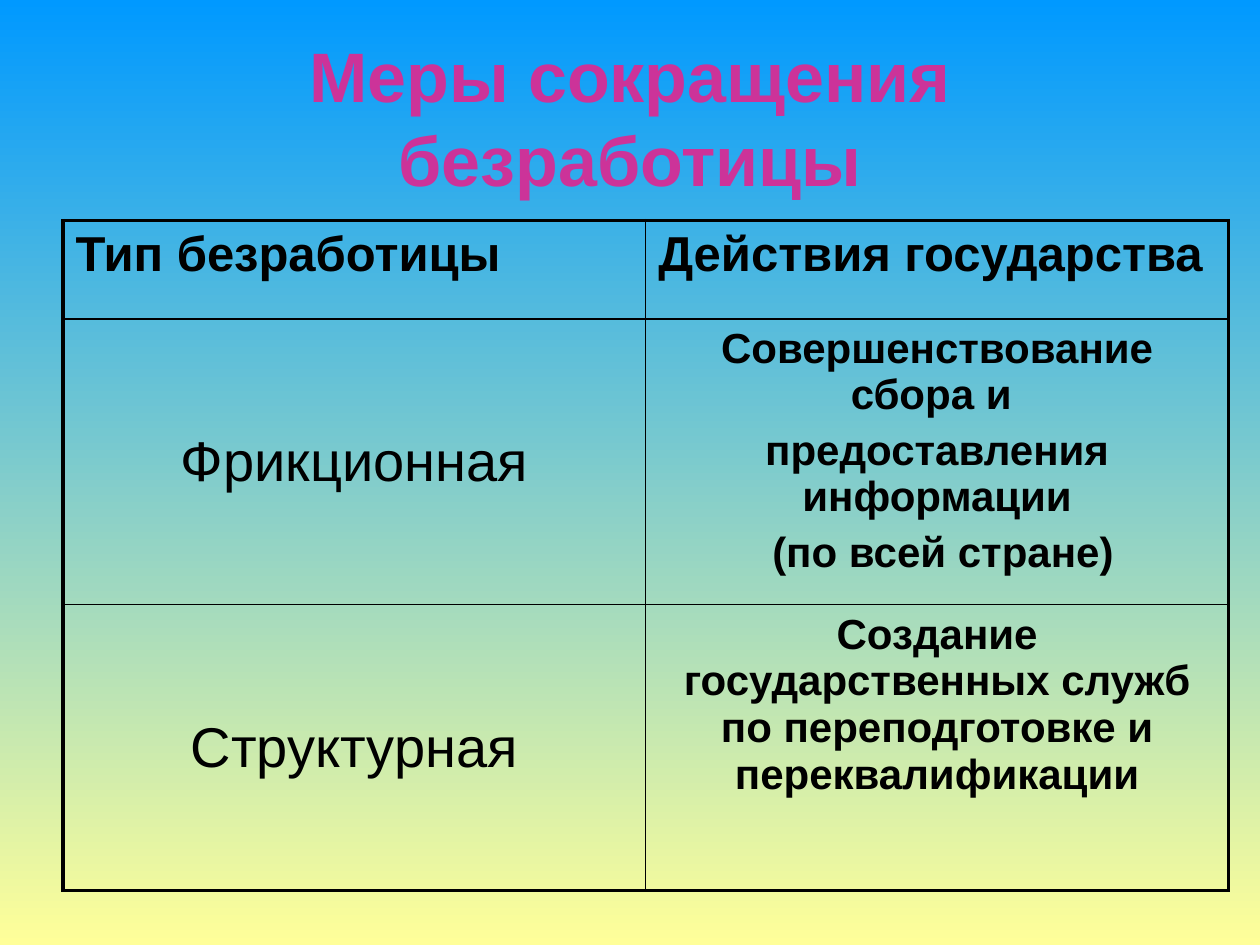
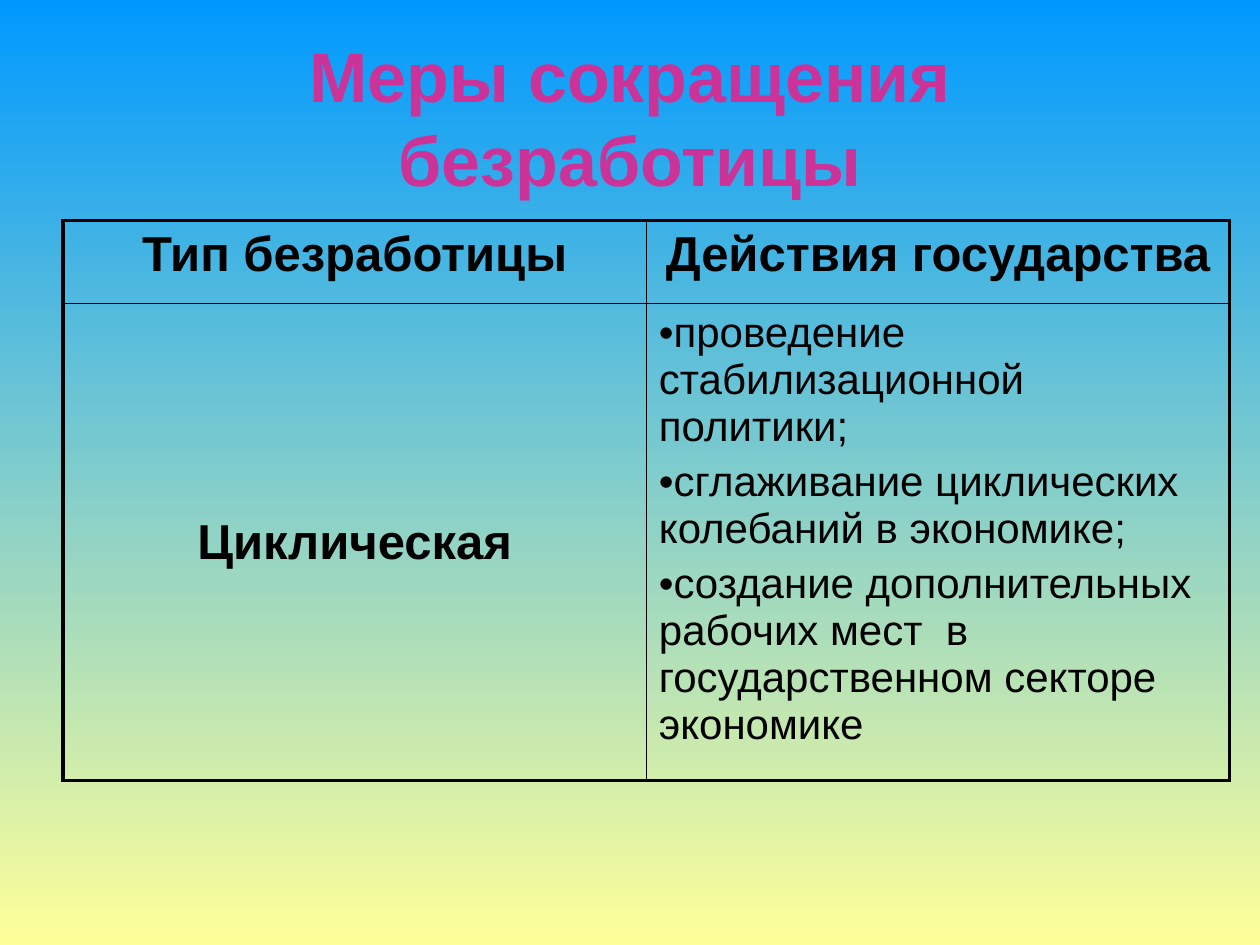
import dataclasses
import typing

import lxml.etree
import pptx
import pptx.dml.color
import pptx.enum.text
import pptx.oxml.ns
import pptx.util

Inches = pptx.util.Inches
Pt = pptx.util.Pt
qn = pptx.oxml.ns.qn
LEFT = pptx.enum.text.PP_ALIGN.LEFT
CENTER = pptx.enum.text.PP_ALIGN.CENTER
TOP = pptx.enum.text.MSO_ANCHOR.TOP
MIDDLE = pptx.enum.text.MSO_ANCHOR.MIDDLE


@dataclasses.dataclass(frozen=True)
class Theme:
    font: str = "Arial"
    sky: str = "0099FF"
    sand: str = "FFFF99"
    title: str = "CC3399"
    ink: str = "000000"
    title_size: int = 40
    type_size: int = 32
    head_size: int = 28
    body_size: int = 24
    outer_line: float = 2.25
    inner_line: float = 1
    space_before: int = 20  # percent of the line


@dataclasses.dataclass(frozen=True)
class Cell:
    lines: tuple[str, ...]
    size: int
    bold: bool = True
    align: typing.Any = CENTER
    anchor: typing.Any = TOP
    bullet: bool = False


@dataclasses.dataclass(frozen=True)
class Measures:
    width: float
    row_heights: tuple[float, ...]
    rows: tuple[tuple[Cell, Cell], ...]


THEME = Theme()
TITLE = "Меры сокращения безработицы"


def rgb(value: str) -> pptx.dml.color.RGBColor:
    return pptx.dml.color.RGBColor.from_string(value)


def write(tf, lines: tuple[str, ...], *, size: int, color: str = THEME.ink,
          bold: bool = True, align=CENTER, anchor=TOP,
          space: int = 0, bullet: bool = False) -> None:
    """Fill a text frame, one paragraph for each line."""
    tf.word_wrap = True
    tf.vertical_anchor = anchor
    for i, line in enumerate(lines):
        p = tf.paragraphs[0] if i == 0 else tf.add_paragraph()
        p.alignment = align
        p_pr = p._p.get_or_add_pPr()
        if space:
            before = lxml.etree.SubElement(p_pr, qn("a:spcBef"))
            lxml.etree.SubElement(before, qn("a:spcPct"), val=str(space * 1000))
        if bullet:
            lxml.etree.SubElement(p_pr, qn("a:buFont"), typeface=THEME.font)
            lxml.etree.SubElement(p_pr, qn("a:buChar"), char="•")
        r = p.add_run()
        r.text = line
        r.font.name = THEME.font
        r.font.size = Pt(size)
        r.font.bold = bold
        r.font.color.rgb = rgb(color)


def set_borders(cell, widths: dict[str, float]) -> None:
    """Draw the cell edges; the lines must precede the fill in the XML."""
    tc_pr = cell._tc.get_or_add_tcPr()
    for i, (side, width) in enumerate(widths.items()):
        ln = lxml.etree.Element(qn(f"a:ln{side}"), w=str(Pt(width)))
        fill = lxml.etree.SubElement(ln, qn("a:solidFill"))
        lxml.etree.SubElement(fill, qn("a:srgbClr"), val=THEME.ink)
        tc_pr.insert(i, ln)


def add_base(prs):
    """Add a slide with the shared gradient and title."""
    s = prs.slides.add_slide(prs.slide_layouts[6])
    fill = s.background.fill
    fill.gradient()
    fill.gradient_angle = 270
    for position, (stop, color) in enumerate(zip(fill.gradient_stops, (THEME.sky, THEME.sand))):
        stop.color.rgb = rgb(color)
        stop.position = position
    sp = s.shapes.add_textbox(Inches(0.5), Inches(0.3), Inches(9), Inches(1.25))
    write(sp.text_frame, (TITLE,), size=THEME.title_size, color=THEME.title, anchor=MIDDLE)
    return s


def add_measures(s, m: Measures) -> None:
    """Add the table: thick frame, thin inner grid, no cell fill."""
    last_row, last_col = len(m.rows) - 1, 1
    table = s.shapes.add_table(
        len(m.rows), 2, Inches(0.5), Inches(1.75),
        Inches(m.width), Inches(sum(m.row_heights))).table
    table.first_row = table.horz_banding = False

    def line(is_outer: bool) -> float:
        return THEME.outer_line if is_outer else THEME.inner_line

    for y, row in enumerate(m.rows):
        table.rows[y].height = Inches(m.row_heights[y])
        for x, c in enumerate(row):
            cell = table.cell(y, x)
            cell.fill.background()
            set_borders(cell, {"L": line(x == 0), "R": line(x == last_col),
                               "T": line(y == 0), "B": line(y == last_row)})
            write(cell.text_frame, c.lines, size=c.size, bold=c.bold, align=c.align,
                  space=THEME.space_before, bullet=c.bullet)
            cell.vertical_anchor = c.anchor
            if c.bullet:
                cell.margin_bottom = 0


def header(align) -> tuple[Cell, Cell]:
    return (Cell(("Тип безработицы",), THEME.head_size, align=align),
            Cell(("Действия государства",), THEME.head_size, align=align))


def type_cell(name: str, size: int = THEME.type_size, bold: bool = False) -> Cell:
    return Cell((name,), size, bold, anchor=MIDDLE)


SLIDES = (
    # Frictional and structural unemployment
    Measures(9.25, (0.78, 2.27, 2.27), (
        header(LEFT),
        (type_cell("Фрикционная"),
         Cell(("Совершенствование сбора и ", "предоставления информации",
               " (по всей стране)"), THEME.body_size)),
        (type_cell("Структурная"),
         Cell(("Создание государственных служб по переподготовке и переквалификации",),
              THEME.body_size)),
    )),
    # Cyclical unemployment
    Measures(9.26, (0.66, 3.58), (
        header(CENTER),
        (type_cell("Циклическая", THEME.head_size, True),
         Cell(("проведение стабилизационной политики;",
               "сглаживание циклических колебаний в экономике;",
               "создание дополнительных рабочих мест  в государственном секторе экономике"),
              THEME.body_size, bold=False, align=LEFT, bullet=True)),
    )),
)


def main() -> None:
    prs = pptx.Presentation()
    prs.slide_width, prs.slide_height = Inches(10), Inches(7.5)
    for m in SLIDES:
        add_measures(add_base(prs), m)
    prs.save("out.pptx")


if __name__ == "__main__":
    main()
